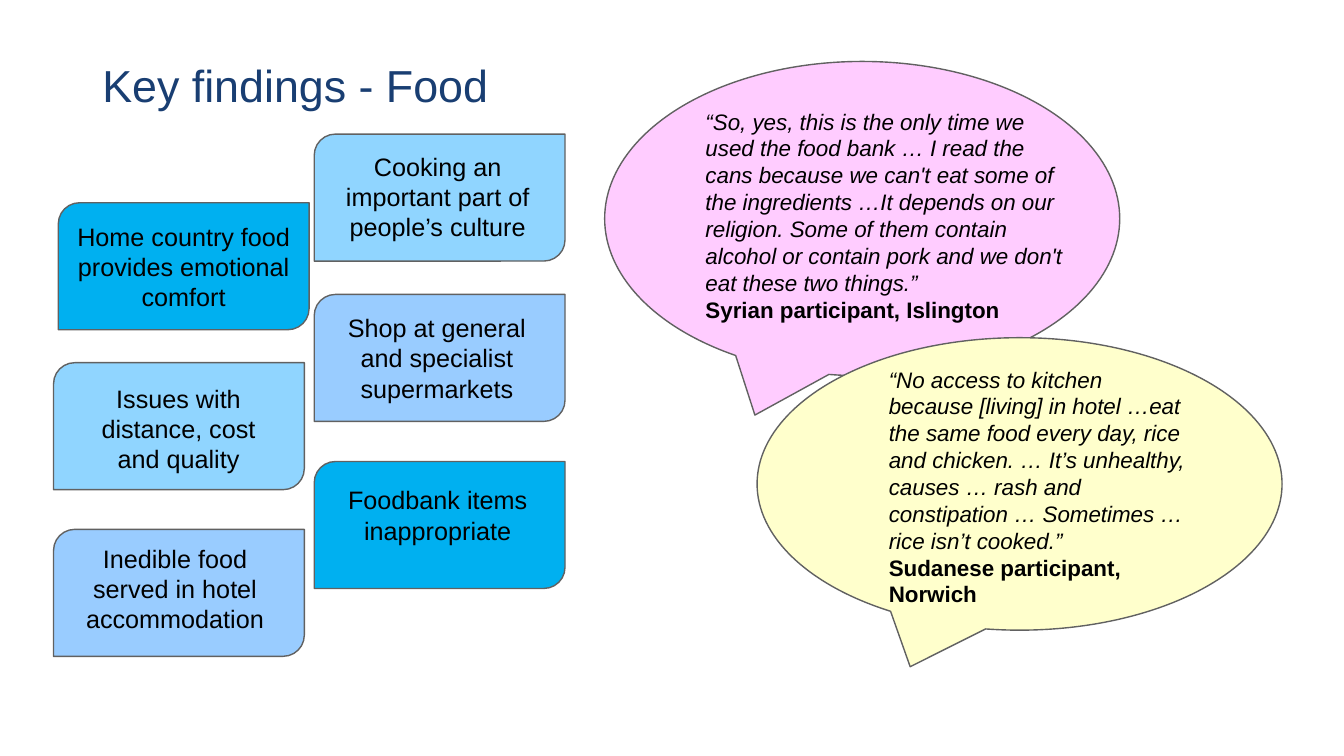
from pptx import Presentation
from pptx.dml.color import RGBColor
from pptx.enum.shapes import MSO_SHAPE
from pptx.enum.text import MSO_ANCHOR, PP_ALIGN
from pptx.util import Cm, Pt

CARD = MSO_SHAPE.ROUND_2_DIAG_RECTANGLE
BUBBLE = MSO_SHAPE.OVAL_CALLOUT
MIDDLE, TOP = MSO_ANCHOR.MIDDLE, MSO_ANCHOR.TOP
CENTER, LEFT = PP_ALIGN.CENTER, PP_ALIGN.LEFT

NAVY = RGBColor(0x19, 0x3E, 0x72)
BLACK = RGBColor(0, 0, 0)
GREY = RGBColor(0x61, 0x61, 0x61)
SKY = RGBColor(0x90, 0xD5, 0xFF)
BRIGHT = RGBColor(0x00, 0xB0, 0xF0)
PERIWINKLE = RGBColor(0x99, 0xCC, 0xFF)
PINK = RGBColor(0xFF, 0xCC, 0xFF)
YELLOW = RGBColor(0xFF, 0xFF, 0xCC)

CARD_WIDTH, CARD_HEIGHT = 6.32, 3.2
RIGHT_COLUMN, LEFT_COLUMN = 7.92, 1.35

FINDINGS = [
    (RIGHT_COLUMN, 3.38, SKY, "Cooking an important part of people’s culture", (0.39, 0.3, 5.44, 2.57)),
    (1.47, 5.11, BRIGHT, "Home country food provides emotional comfort", None),
    (RIGHT_COLUMN, 7.42, PERIWINKLE, "Shop at general and specialist supermarkets", (0.23, 0.33, 5.72, 2.57)),
    (LEFT_COLUMN, 9.14, SKY, "Issues with distance, cost and quality", (0.43, 0.39, 5.44, 2.57)),
    (RIGHT_COLUMN, 11.63, BRIGHT, "Foodbank items inappropriate", (0.39, 0.46, 5.44, 1.8)),
    (LEFT_COLUMN, 13.34, PERIWINKLE, "Inedible food served in hotel accommodation", (0.43, 0.22, 5.26, 2.57)),
]

QUOTES = [
    ((15.24, 1.55, 12.98, 7.92), PINK, (2.29, 1.04, 9.86, 5.74),
     "“So, yes, this is the only time we used the food bank … I read the cans because "
     "we can't eat some of the ingredients …It depends on our religion. Some of them "
     "contain alcohol or contain pork and we don't eat these two things.”",
     "Syrian participant, Islington"),
    ((19.08, 8.51, 13.23, 7.37), YELLOW, (3.07, 0.58, 8.13, 7.19),
     "“No access to kitchen because [living] in hotel …eat the same food every day, "
     "rice and chicken. … It’s unhealthy, causes … rash and constipation … Sometimes "
     "… rice isn’t cooked.”",
     "Sudanese participant, Norwich"),
]


def add_outlined(shapes, kind, box, fill):
    shape = shapes.add_shape(kind, *map(Cm, box))
    shape.shadow.inherit = False
    shape.fill.solid()
    shape.fill.fore_color.rgb = fill
    shape.line.color.rgb = GREY
    shape.line.width = Pt(1)
    return shape


def add_text_box(shapes, box, anchor=TOP):
    frame = shapes.add_textbox(*map(Cm, box)).text_frame
    frame.word_wrap = True
    frame.vertical_anchor = anchor
    return frame


def write(para, text, size, color=BLACK, align=LEFT):
    para.text = text
    para.alignment = align
    para.font.name = "Arial"
    para.font.size = Pt(size)
    para.font.color.rgb = color


def add_title(page, box):
    para = add_text_box(page.shapes, box, MIDDLE).paragraphs[0]
    write(para, "Key findings - Food", 32, NAVY)
    para.line_spacing = 0.9


def add_card(page, left, top, fill):
    return add_outlined(page.shapes, CARD, (left, top, CARD_WIDTH, CARD_HEIGHT), fill)


def add_findings(page):
    for left, top, fill, text, inner in FINDINGS:
        card = add_card(page, left, top, fill)
        if inner:
            across, down, width, height = inner
            frame = add_text_box(page.shapes, (left + across, top + down, width, height))
        else:
            frame = card.text_frame
            frame.word_wrap = True
            frame.vertical_anchor = MIDDLE
        write(frame.paragraphs[0], text, 18, align=CENTER)


def add_quote(page, box, fill, inner, quote, speaker):
    group = page.shapes.add_group_shape()
    add_outlined(group.shapes, BUBBLE, box, fill)
    across, down, width, height = inner
    frame = add_text_box(group.shapes, (box[0] + across, box[1] + down, width, height))
    quote_para, speaker_para = frame.paragraphs[0], frame.add_paragraph()
    write(quote_para, quote, 16)
    quote_para.font.italic = True
    write(speaker_para, speaker, 16)
    speaker_para.font.bold = True


def main():
    deck = Presentation()
    deck.slide_width, deck.slide_height = Cm(33.87), Cm(19.05)
    page = deck.slides.add_slide(deck.slide_layouts[6])
    add_title(page, (2.33, 1.02, 29.21, 2.41))
    add_findings(page)
    for quote in QUOTES:
        add_quote(page, *quote)
    deck.save("out.pptx")


if __name__ == "__main__":
    main()
